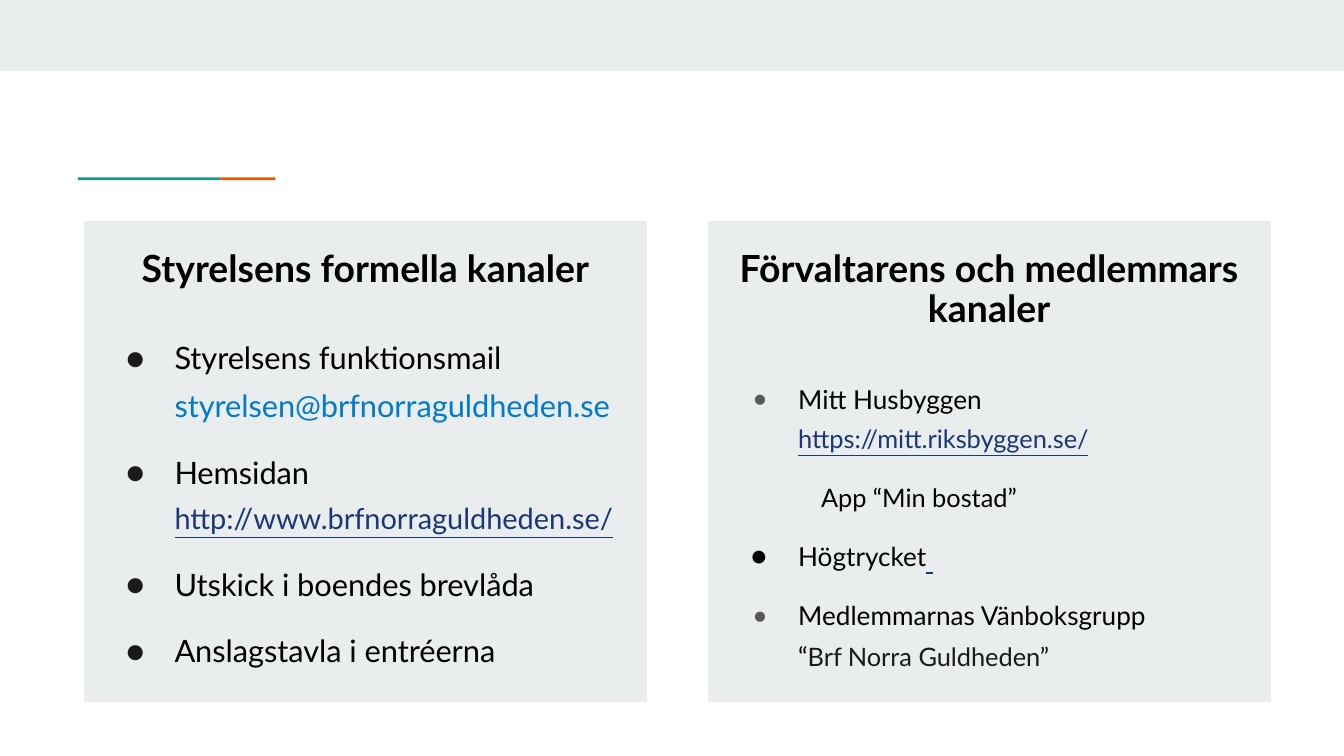
from lxml import etree
from pptx import Presentation
from pptx.dml.color import RGBColor
from pptx.enum.shapes import MSO_SHAPE as SHAPE
from pptx.enum.text import PP_ALIGN as ALIGN
from pptx.oxml.ns import qn
from pptx.util import Inches, Pt

C = {"panel": "E9EDEE", "white": "FFFFFF", "teal": "1A9988", "orange": "EB5600",
     "black": "000000", "dark": "1A1A1A", "grey": "595959", "blue": "007ACC", "link": "1C3678"}

prs = Presentation()
prs.slide_width = Inches(10)
prs.slide_height = Inches(10 * 9 / 16)
s = prs.slides.add_slide(prs.slide_layouts[6])


def add_rect(x, y, w, h, fill, line=None):
    sp = s.shapes.add_shape(SHAPE.RECTANGLE, Inches(x), Inches(y), Inches(w), Inches(h))
    sp.shadow.inherit = False
    sp.fill.solid()
    sp.fill.fore_color.rgb = RGBColor.from_string(C[fill])
    if line:
        sp.line.color.rgb = RGBColor.from_string(C[line])
        sp.line.width = Pt(0.75)
    else:
        sp.line.fill.background()


def add_text(x, y, w, h, paragraphs, spacing, align=ALIGN.LEFT, bold=False):
    tf = s.shapes.add_textbox(Inches(x), Inches(y), Inches(w), Inches(h)).text_frame
    tf.word_wrap = True
    tf.margin_left = tf.margin_right = tf.margin_top = tf.margin_bottom = Inches(0.1)
    for i, (bullet, left, hang, runs) in enumerate(paragraphs):
        p = tf.paragraphs[0] if i == 0 else tf.add_paragraph()
        p.alignment = align
        p.line_spacing = spacing
        p.space_before = Pt(10 if i else 0)
        pPr = p._p.get_or_add_pPr()
        pPr.set("marL", str(Inches(left)))
        pPr.set("indent", str(Inches(-hang)))
        if bullet:
            color, percent = bullet
            clr = etree.SubElement(pPr, qn("a:buClr"))
            etree.SubElement(clr, qn("a:srgbClr"), val=C[color])
            etree.SubElement(pPr, qn("a:buSzPct"), val=str(percent * 1000))
            etree.SubElement(pPr, qn("a:buFont"), typeface="Lato")
            etree.SubElement(pPr, qn("a:buChar"), char="●")
        for text, size, color, underline in runs:
            if text.startswith("\n"):
                p.add_line_break()
            r = p.add_run()
            r.text = text.lstrip("\n")
            r.font.name = "Lato"
            r.font.size = Pt(size)
            r.font.bold = bold
            r.font.underline = underline
            r.font.color.rgb = RGBColor.from_string(C[color])


add_rect(0, 0, 10, 0.53, "panel")
add_rect(0.58, 1.32, 1.06, 0.02, "teal")
add_rect(1.64, 1.32, 0.41, 0.02, "orange")

dark, grey, black = ("dark", 100), ("grey", 79), ("black", 100)
formal = [
    (dark, 0.5, 0.36, [("Styrelsens funktionsmail ", 16.5, "black", False),
                       ("\nstyrelsen@brfnorraguldheden.se", 16.5, "blue", False)]),
    (dark, 0.5, 0.36, [("Hemsidan", 16.5, "black", False),
                       (" ", 16.5, "link", True),
                       ("http://www.brfnorraguldheden.se/", 15.5, "link", True)]),
    (dark, 0.5, 0.36, [("Utskick i boendes brevlåda", 16.5, "black", False)]),
    (dark, 0.5, 0.36, [("Anslagstavla i entréerna", 16.5, "black", False)]),
]
members = [
    (grey, 0.5, 0.33, [("Mitt Husbyggen", 14, "black", False),
                       ("\nhttps://mitt.riksbyggen.se/", 13.6, "link", True)]),
    (None, 0.67, 0, [("App “Min bostad”", 13.6, "black", False)]),
    (black, 0.5, 0.35, [("Högtrycket", 14, "black", False), (" ", 14, "link", True)]),
    (grey, 0.5, 0.33, [("Medlemmarnas Vänboksgrupp", 14, "black", False),
                       ("\n“", 14, "black", False),
                       ("Brf Norra Guldheden”", 13.6, "dark", False)]),
]
panels = [
    (0.62, "Styrelsens formella kanaler", 2.34, formal),
    (5.26, "Förvaltarens och medlemmars kanaler", 2.68, members),
]
for x, title, top, body in panels:
    add_rect(x, 1.64, 4.2, 3.59, "panel", "white")
    add_text(x, 1.76, 4.2, 0.59, [(None, 0, 0, [(title, 20, "black", False)])],
             0.9, ALIGN.CENTER, True)
    add_text(x + 0.08, top, 4.05, 5.1 - top, body, 1.3)

prs.save("out.pptx")
